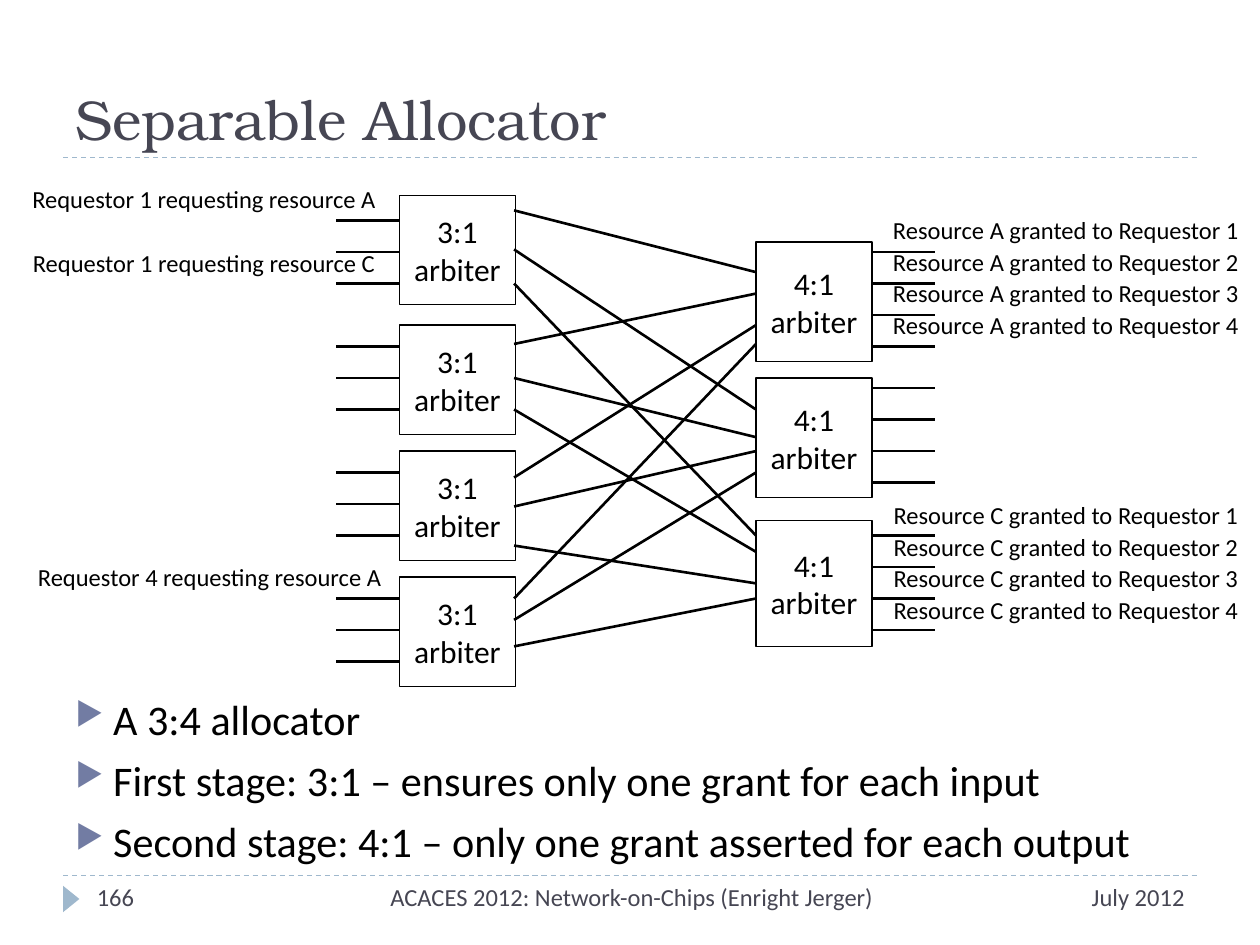
import pptx
import pptx.dml.color
import pptx.enum.dml
import pptx.enum.shapes
import pptx.enum.text
import pptx.oxml.ns
import pptx.util
from lxml import etree

Inches, Pt = pptx.util.Inches, pptx.util.Pt
SHAPE = pptx.enum.shapes.MSO_SHAPE
ALIGN = pptx.enum.text.PP_ALIGN
ANCHOR = pptx.enum.text.MSO_ANCHOR

BLACK, SLATE, PALE_BLUE, BULLET_BLUE = "000000", "464653", "9FB8CD", "727CA3"

# First stage: top of each 3:1 arbiter, its first request line, its output heights
FIRST_STAGE = [
    (1.55, 1.75, [1.67, 1.98, 2.25]),
    (2.58, 2.75, [2.73, 3.00, 3.25]),
    (3.58, 3.75, [3.79, 4.02, 4.33]),
    (4.58, 4.75, [4.75, 4.92, 5.13]),
]
# Second stage: top and height of each 4:1 arbiter, first grant line, input heights
SECOND_STAGE = [
    (1.92, 0.95, 2.00, [2.16, 2.33, 2.58, 2.73]),
    (3.00, 0.95, 3.08, [3.25, 3.47, 3.58, 3.75]),
    (4.13, 1.00, 4.25, [4.25, 4.38, 4.63, 4.75]),
]
REQUESTS = [(1.41, 3.08, 1, "A"), (1.92, 3.08, 1, "C"), (4.41, 3.17, 4, "A")]
GRANTS = [("A", 1.66), ("C", 3.92)]
LINE_GAP = 0.25
ARBITER_WIDTH = 0.92


def rgb(hex_colour):
    return pptx.dml.color.RGBColor.from_string(hex_colour)


def write(paragraph, text, size, colour=BLACK, font="Calibri", align=ALIGN.LEFT):
    paragraph.alignment = align
    run = paragraph.add_run()
    run.text = text
    run.font.size, run.font.name = Pt(size), font
    run.font.color.rgb = rgb(colour)


def add_frame(slide, left, top, width, height, anchor=ANCHOR.TOP):
    box = slide.shapes.add_textbox(Inches(left), Inches(top), Inches(width), Inches(height))
    frame = box.text_frame
    frame.word_wrap = True
    frame.vertical_anchor = anchor
    return frame


def add_label(slide, left, top, width, text):
    frame = add_frame(slide, left, top, width, 0.34)
    write(frame.paragraphs[0], text, 14, align=ALIGN.CENTER)


def add_line(slide, x1, y1, x2, y2, colour=BLACK, weight=1.5, dashed=False):
    line = slide.shapes.add_connector(
        pptx.enum.shapes.MSO_CONNECTOR.STRAIGHT,
        Inches(x1), Inches(y1), Inches(x2), Inches(y2))
    line.line.color.rgb = rgb(colour)
    line.line.width = Pt(weight)
    if dashed:
        line.line.dash_style = pptx.enum.dml.MSO_LINE.DASH
    properties = line._element.spPr
    etree.SubElement(properties, pptx.oxml.ns.qn("a:effectLst"))


def add_arbiter(slide, left, top, height, ratio):
    arbiter = slide.shapes.add_shape(
        SHAPE.RECTANGLE, Inches(left), Inches(top), Inches(ARBITER_WIDTH), Inches(height))
    arbiter.shadow.inherit = False
    arbiter.fill.background()
    arbiter.line.color.rgb = rgb(BLACK)
    arbiter.line.width = Pt(0.75)
    frame = arbiter.text_frame
    frame.word_wrap = True
    frame.vertical_anchor = ANCHOR.MIDDLE
    write(frame.paragraphs[0], f"{ratio} arbiter", 18, align=ALIGN.CENTER)


def add_title(slide, left, top, width, height):
    add_line(slide, left, top + height, left + width, top + height, PALE_BLUE, 0.75, True)
    frame = add_frame(slide, left, top, width, height, ANCHOR.BOTTOM)
    write(frame.paragraphs[0], "Separable Allocator", 32, SLATE, "TeX Gyre Bonum")


def add_bullets(slide, left, top, width, height, points):
    frame = add_frame(slide, left, top, width, height)
    for index, point in enumerate(points):
        paragraph = frame.add_paragraph() if index else frame.paragraphs[0]
        paragraph.space_before = Pt(6)
        write(paragraph, point, 24.1)
        properties = paragraph._p.get_or_add_pPr()
        properties.set("marL", str(Inches(0.3)))
        properties.set("indent", str(-Inches(0.3)))
        qn = pptx.oxml.ns.qn
        colour = etree.SubElement(properties, qn("a:buClr"))
        etree.SubElement(colour, qn("a:srgbClr"), val=BULLET_BLUE)
        etree.SubElement(properties, qn("a:buSzPct"), val="76000")
        etree.SubElement(properties, qn("a:buChar"), char="▶")


def add_request_stage(slide, left, stub):
    for top, first_line, _ in FIRST_STAGE:
        add_arbiter(slide, left, top, 0.87, "3:1")
        for k in range(3):
            y = first_line + k * LINE_GAP
            add_line(slide, left, y, left - stub, y)
    for top, width, requestor, resource in REQUESTS:
        add_label(slide, 0.08, top, width,
                  f"Requestor {requestor} requesting resource {resource}")


def add_grant_stage(slide, left, stub):
    right = left + ARBITER_WIDTH
    for top, height, first_line, _ in SECOND_STAGE:
        add_arbiter(slide, left, top, height, "4:1")
        for k in range(4):
            y = first_line + k * LINE_GAP
            add_line(slide, right + stub, y, right, y)
    for resource, top in GRANTS:
        for k in range(4):
            add_label(slide, right, top + k * LINE_GAP, 3.08,
                      f"Resource {resource} granted to Requestor {k + 1}")


def add_crossbar(slide, left, right):
    # Output j of arbiter i feeds input i of second-stage arbiter j
    for i, (_, _, outputs) in enumerate(FIRST_STAGE):
        for j, (_, _, _, inputs) in enumerate(SECOND_STAGE):
            add_line(slide, left, outputs[j], right, inputs[i])


def add_footer(slide, left, top, width):
    add_line(slide, left, top, left + width, top, PALE_BLUE, 0.75, True)
    marker = slide.shapes.add_shape(
        SHAPE.ISOSCELES_TRIANGLE, Inches(left - 0.04), Inches(top + 0.12),
        Inches(0.21), Inches(0.13))
    marker.rotation = 90
    marker.shadow.inherit = False
    marker.fill.solid()
    marker.fill.fore_color.rgb = rgb(PALE_BLUE)
    marker.line.fill.background()
    for x, box_width, text, align in [
        (0.67, 1.03, "166", ALIGN.LEFT),
        (2.08, 5.87, "ACACES 2012: Network-on-Chips (Enright Jerger)", ALIGN.CENTER),
        (8.2, 1.3, "July 2012", ALIGN.RIGHT),
    ]:
        frame = add_frame(slide, x, top, box_width, 0.4)
        write(frame.paragraphs[0], text, 14, SLATE, align=align)


def main():
    deck = pptx.Presentation()
    deck.slide_width, deck.slide_height = Inches(10), Inches(7.5)
    slide = deck.slides.add_slide(deck.slide_layouts[6])
    add_title(slide, 0.5, 0.17, 9, 1.08)
    add_bullets(slide, 0.5, 5.45, 9, 1.58, [
        "A 3:4 allocator",
        "First stage: 3:1 – ensures only one grant for each input",
        "Second stage: 4:1 – only one grant asserted for each output",
    ])
    add_request_stage(slide, 3.17, 0.5)
    add_crossbar(slide, 4.08, 6)
    add_grant_stage(slide, 6, 0.5)
    add_footer(slide, 0.5, 6.95, 9)
    deck.save("out.pptx")


if __name__ == "__main__":
    main()
